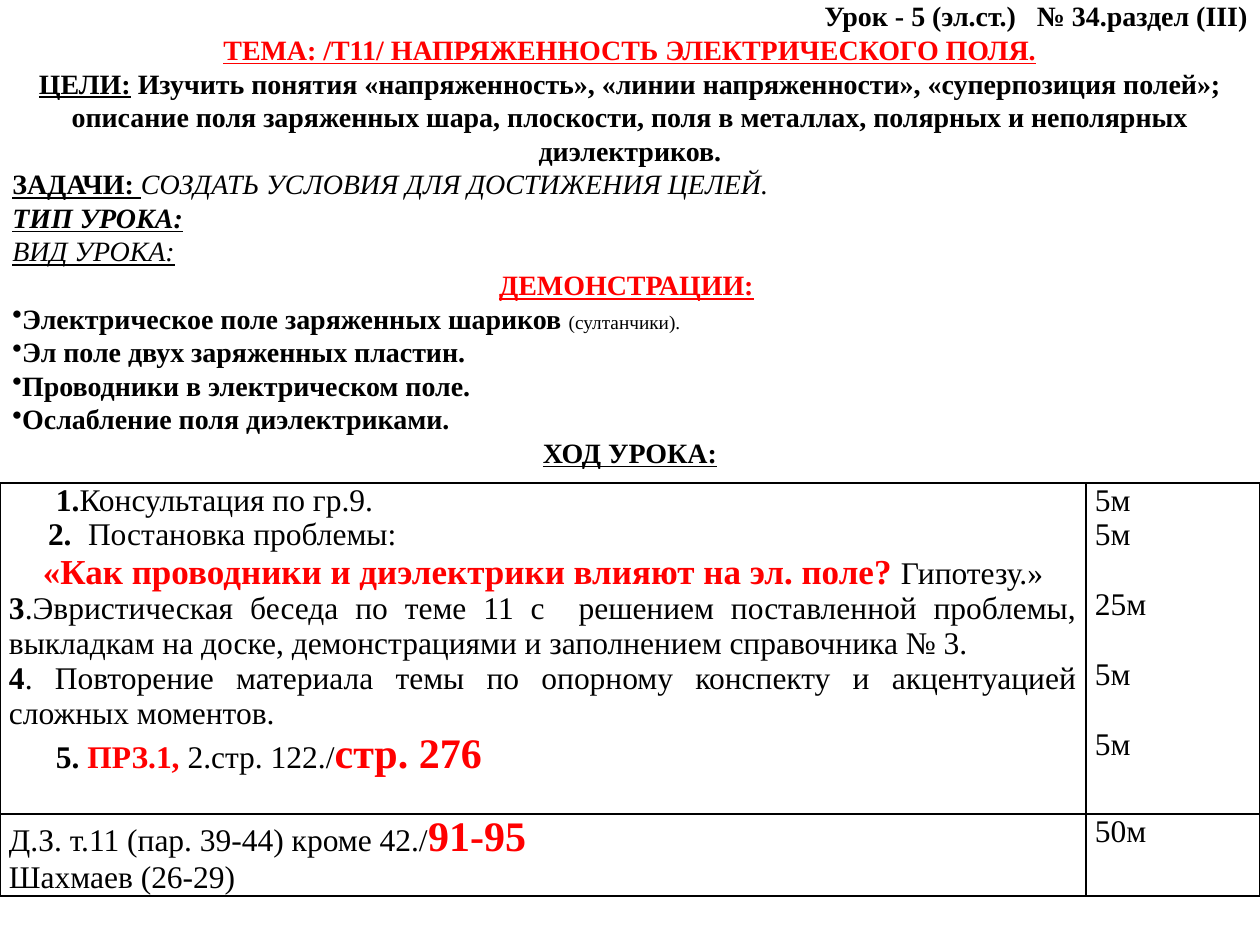
from lxml.etree import SubElement as Sub
from pptx import Presentation
from pptx.dml.color import RGBColor
from pptx.enum.text import MSO_ANCHOR as Anchor, PP_ALIGN as Align
from pptx.oxml.ns import qn
from pptx.util import Emu, Pt

PX = 914400 // 126
RED, BLACK = "FF0000", "000000"
FONT = "Times New Roman"


def px(n):
    return Emu(n * PX)


def rgb(code):
    return RGBColor.from_string(code)


def run(text, **fmt):
    """Pair a text with its format: size, color, bold, italic, line."""
    return text, fmt


def bold(text, **fmt):
    return run(text, bold=True, **fmt)


def para(*runs, **fmt):
    """Pair runs with a paragraph format: align, gap, left, hang, dot."""
    return runs, fmt


class Page:
    def __init__(self, deck, font):
        self.font = font
        self.slide = deck.slides.add_slide(deck.slide_layouts[6])

    def put(self, part, text, size, color=BLACK, bold=False,
            italic=False, line=False):
        piece = part.add_run()
        piece.text = text
        font = piece.font
        font.name, font.size = self.font, Pt(size)
        font.bold, font.italic, font.underline = bold, italic, line
        font.color.rgb = rgb(color)

    def fill(self, frame, paras, size):
        frame.word_wrap = True
        for i, (runs, fmt) in enumerate(paras):
            part = frame.add_paragraph() if i else frame.paragraphs[0]
            part.alignment = fmt.get("align", Align.LEFT)
            part.space_before = Pt(fmt.get("gap", 0))
            props = part._p.get_or_add_pPr()
            props.set("marL", str(px(fmt.get("left", 0))))
            props.set("indent", str(px(-fmt.get("hang", 0))))
            if fmt.get("dot"):
                Sub(props, qn("a:buChar"), char="•")
            for text, style in runs:
                self.put(part, text, **{"size": size, **style})

    def text(self, x, y, w, h, paras, size):
        frame = self.slide.shapes.add_textbox(px(x), px(y), px(w), px(h)).text_frame
        frame.vertical_anchor = Anchor.MIDDLE
        self.fill(frame, paras, size)

    def edge(self, cell):
        props = cell._tc.get_or_add_tcPr()
        for i, side in enumerate(("lnL", "lnR", "lnT", "lnB")):
            line = props.makeelement(qn("a:" + side), {"w": str(Pt(1))})
            paint = Sub(line, qn("a:solidFill"))
            Sub(paint, qn("a:srgbClr"), val=BLACK)
            props.insert(i, line)

    def table(self, x, y, cols, rows, cells, size):
        grid = self.slide.shapes.add_table(
            len(rows), len(cols), px(x), px(y), px(sum(cols)), px(sum(rows))).table
        grid.first_row = grid.horz_banding = False
        for col, w in zip(grid.columns, cols):
            col.width = px(w)
        for row, h, line in zip(grid.rows, rows, cells):
            row.height = px(h)
            for cell, paras in zip(row.cells, line):
                cell.margin_left = cell.margin_right = px(9)
                cell.margin_top = cell.margin_bottom = 0
                cell.fill.background()
                self.edge(cell)
                self.fill(cell.text_frame, paras, size)


MID, FULL = Align.CENTER, Align.JUSTIFY

HEAD = [
    para(bold("Урок - 5 (эл.ст.)   № 34.раздел (III)"), align=Align.RIGHT),
    para(bold("ТЕМА: /Т11/ НАПРЯЖЕННОСТЬ ЭЛЕКТРИЧЕСКОГО ПОЛЯ.",
              color=RED, line=True), align=MID),
    para(bold("ЦЕЛИ:", line=True),
         bold(" Изучить понятия «напряженность», «линии напряженности», "
              "«суперпозиция полей»; описание поля заряженных шара, плоскости, "
              "поля в металлах, полярных и неполярных диэлектриков."), align=MID),
    para(bold("ЗАДАЧИ: ", line=True),
         run("СОЗДАТЬ УСЛОВИЯ ДЛЯ ДОСТИЖЕНИЯ ЦЕЛЕЙ.", italic=True)),
    para(bold("ТИП УРОКА:", italic=True, line=True)),
    para(run("ВИД УРОКА:", italic=True, line=True)),
    para(bold("ДЕМОНСТРАЦИИ:", color=RED, line=True), bold(" "), align=MID),
    para(bold("Электрическое поле заряженных шариков "),
         run("(султанчики).", size=11), dot=True),
    para(bold("Эл поле двух заряженных пластин."), dot=True),
    para(bold("Проводники в электрическом поле."), dot=True),
    para(bold("Ослабление поля диэлектриками."), dot=True),
    para(bold("ХОД УРОКА:", line=True), align=MID),
]

STEPS = [
    para(bold("1."), run("Консультация по гр.9."), left=47),
    para(bold("2.\t"), run("Постановка проблемы:"), left=79, hang=40),
    para(bold("«Как проводники и диэлектрики влияют на эл. поле? ",
              size=20, color=RED), run("Гипотезу.»"), align=MID),
    para(bold("3"), run(".Эвристическая беседа по теме 11 с  решением поставленной "
                        "проблемы, выкладкам на доске, демонстрациями и "
                        "заполнением справочника № 3."), align=FULL),
    para(bold("4"), run(". Повторение материала темы по опорному конспекту "
                        "и акцентуацией сложных моментов."), align=FULL),
    para(bold("5. "), bold("ПРЗ.1, ", color=RED), run("2.стр. 122./"),
         bold("стр. 276", size=24, color=RED), left=47),
]

TIMES = [para(run(time), gap=gap) for time, gap in
         (("5м", 0), ("5м", 0), ("25м", 20), ("5м", 20), ("5м", 20))]

HOME = [
    para(run("Д.З. т.11 (пар. 39-44) кроме 42./"),
         bold("91-95", size=24, color=RED)),
    para(run("Шахмаев (26-29)")),
]


def main():
    deck = Presentation()
    deck.slide_width, deck.slide_height = px(1260), px(945)
    page = Page(deck, FONT)
    page.table(0, 483, (1086, 174), (331, 82),
               ((STEPS, TIMES), (HOME, [para(run("50м"))])), size=18)
    page.text(0, -10, 1260, 488, HEAD, size=16)
    deck.save("out.pptx")


if __name__ == "__main__":
    main()
